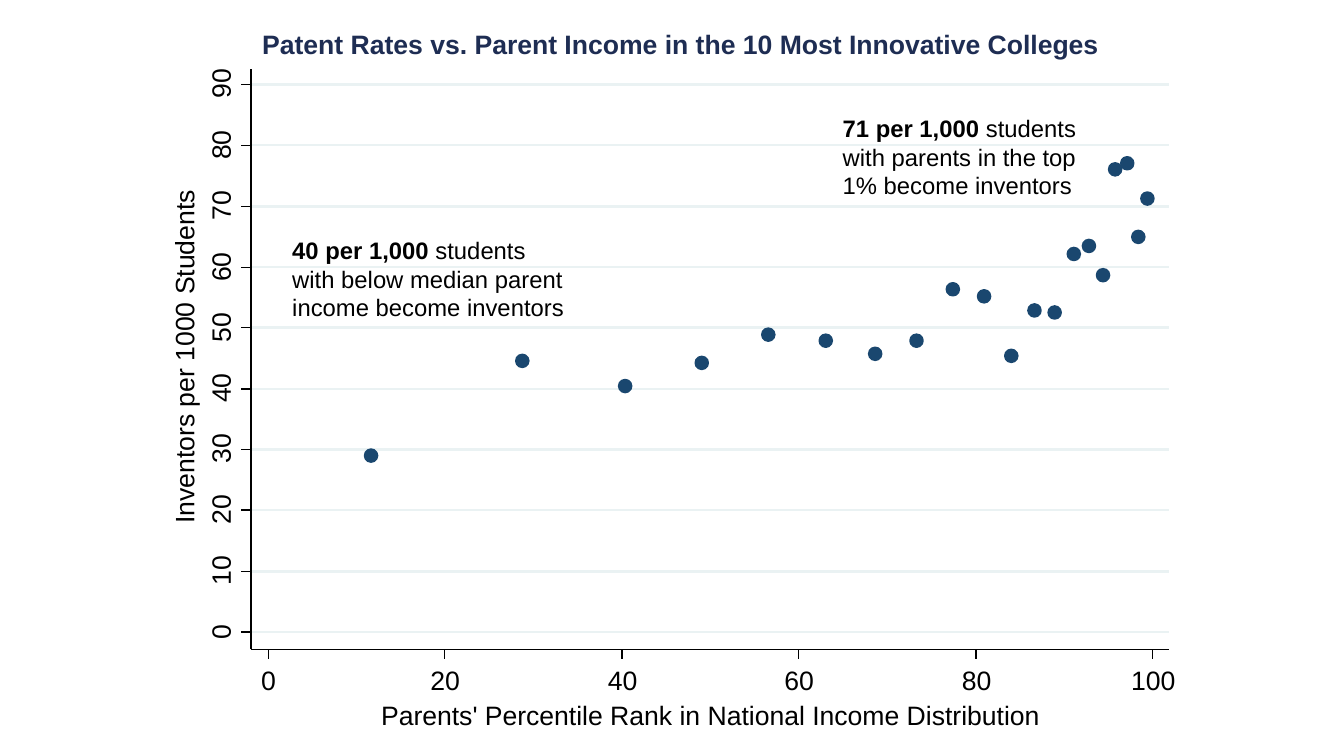
from pptx import Presentation
from pptx import util as u
from pptx.dml.color import RGBColor
from pptx.enum import shapes, text
from pptx.oxml.ns import qn
from lxml import etree

PX = 9144
WHITE = RGBColor(0xFF, 0xFF, 0xFF)
BLACK = RGBColor(0, 0, 0)
GRID = RGBColor(0xEA, 0xF2, 0xF3)
MARKER = RGBColor(0x1A, 0x47, 0x6F)
TITLE = RGBColor(0x1E, 0x2D, 0x53)
FONT = "Arial"
THIN, THICK = 0.88, 1.75
MARGIN = 17
MARKER_SIZE = 12
TICK = 10
X_TICKS = range(0, 101, 20)
Y_TICKS = range(0, 91, 10)
RATES = [
    (11.6, 29.0), (28.7, 44.6), (40.4, 40.5), (49.0, 44.3), (56.6, 48.9),
    (63.1, 47.9), (68.6, 45.8), (73.3, 47.9), (77.4, 56.4), (81.0, 55.2),
    (84.0, 45.4), (86.7, 52.9), (88.9, 52.5), (91.1, 62.2), (92.8, 63.5),
    (94.4, 58.7), (95.8, 76.1), (97.1, 77.1), (98.4, 65.0), (99.4, 71.3),
]


def emu(*lengths):
    """Turn px lengths into whole EMU."""
    return [u.Emu(round(length) * PX) for length in lengths]


def add_shape(parent, kind, box, color, width):
    """Add a preset shape whose fill and line share one colour."""
    shape = parent.shapes.add_shape(kind, *emu(*box))
    shape.shadow.inherit = False
    shape.fill.solid()
    shape.fill.fore_color.rgb = color
    shape.line.color.rgb = color
    shape.line.width = u.Pt(width)


def add_line(parent, start, end, color=BLACK, width=THIN):
    """Add a straight line without a shadow."""
    line = parent.shapes.add_connector(
        shapes.MSO_CONNECTOR.STRAIGHT, *emu(*start, *end))
    line.line.color.rgb = color
    line.line.width = u.Pt(width)
    etree.SubElement(line._element.spPr, qn("a:effectLst"))


def add_text(parent, box, spans, size=19, color=BLACK, wrap=False,
             align=None, inset=(0, 0), turn=0):
    """Add a text box from (wording, bold) spans."""
    label = parent.shapes.add_textbox(*emu(*box))
    label.rotation = turn
    frame = label.text_frame
    frame.word_wrap = wrap
    frame.auto_size = text.MSO_AUTO_SIZE.SHAPE_TO_FIT_TEXT
    frame.margin_left = frame.margin_right = emu(inset[0])[0]
    frame.margin_top = frame.margin_bottom = emu(inset[1])[0]
    para = frame.paragraphs[0]
    para.alignment = align
    for wording, bold in spans:
        span = para.add_run()
        span.text = wording
        span.font.name = FONT
        span.font.size = u.Pt(size)
        span.font.bold = bold
        span.font.color.rgb = color


def add_x_axis(parent, box, x_at):
    """Draw the horizontal axis with its ticks, labels and title."""
    left, top, width, height = box
    bottom = top + height
    add_line(parent, (left, bottom), (left + width, bottom))
    for value in X_TICKS:
        x, digits = x_at(value), len(str(value))
        add_line(parent, (x, bottom), (x, bottom + TICK))
        add_text(parent, (x - 7 * digits, bottom + 15, 12 + 14 * digits, 35),
                 [(str(value), False)])
    add_text(parent, (left + 129, bottom + 49, 663, 35),
             [("Parents' Percentile Rank in National Income Distribution", False)])


def add_y_axis(parent, box, y_at):
    """Draw the vertical axis with its ticks, labels and title."""
    left, top, width, height = box
    add_line(parent, (left, top + height), (left, top))
    for value in Y_TICKS:
        y, digits = y_at(value), len(str(value))
        length = 12 + 14 * digits
        middle = y + 7 * digits - length / 2
        add_line(parent, (left, y), (left - TICK, y))
        add_text(parent, (left - 29 - length / 2, middle - 17.5, length, 35),
                 [(str(value), False)], turn=270)
    add_text(parent, (left - 235, top + 264, 340, 35),
             [("Inventors per 1000 Students", False)], turn=270)


def add_scatter(parent, box):
    """Draw the plot area, gridlines, markers and both axes."""
    left, top, width, height = box

    def x_at(value):
        """Give the px position of an income rank."""
        return left + MARGIN + value * (width - 33) / 100

    def y_at(value):
        """Give the px position of an inventor rate."""
        return top + height - MARGIN - value * (height - 33) / 90

    add_shape(parent, shapes.MSO_SHAPE.RECTANGLE, box, WHITE, THIN)
    for value in Y_TICKS:
        add_line(parent, (left, y_at(value)), (left + width, y_at(value)),
                 GRID, THICK)
    for rank, rate in RATES:
        add_shape(parent, shapes.MSO_SHAPE.OVAL,
                  (x_at(rank) - MARKER_SIZE / 2, y_at(rate) - MARKER_SIZE / 2,
                   MARKER_SIZE, MARKER_SIZE), MARKER, THICK)
    add_y_axis(parent, box, y_at)
    add_x_axis(parent, box, x_at)


def add_callout(page, box, figure, remark):
    """Add a note that opens with a bold figure."""
    add_text(page, box, [(figure, True), (remark, False)],
             size=17, wrap=True, inset=(10, 5))


def add_chart_page(deck):
    """Build the slide of patent rates by parent income."""
    page = deck.slides.add_slide(deck.slide_layouts[6])
    graph = page.shapes.add_group_shape()
    add_shape(graph, shapes.MSO_SHAPE.RECTANGLE, (151, 0, 1031, 749), WHITE, THIN)
    add_scatter(graph, (249, 68, 910, 576))
    add_text(page, (175, 28, 1000, 32),
             [("Patent Rates vs. Parent Income in the 10 Most Innovative Colleges", True)],
             color=TITLE, wrap=True, align=text.PP_ALIGN.CENTER)
    add_callout(page, (826, 108, 266, 96), "71 per 1,000",
                " students with parents in the top 1% become inventors")
    add_callout(page, (280, 229, 299, 96), "40 per 1,000",
                " students with below median parent income become inventors")


def main():
    """Create and save the deck."""
    deck = Presentation()
    deck.slide_width, deck.slide_height = emu(1333, 750)
    add_chart_page(deck)
    deck.save("out.pptx")


if __name__ == "__main__":
    main()
